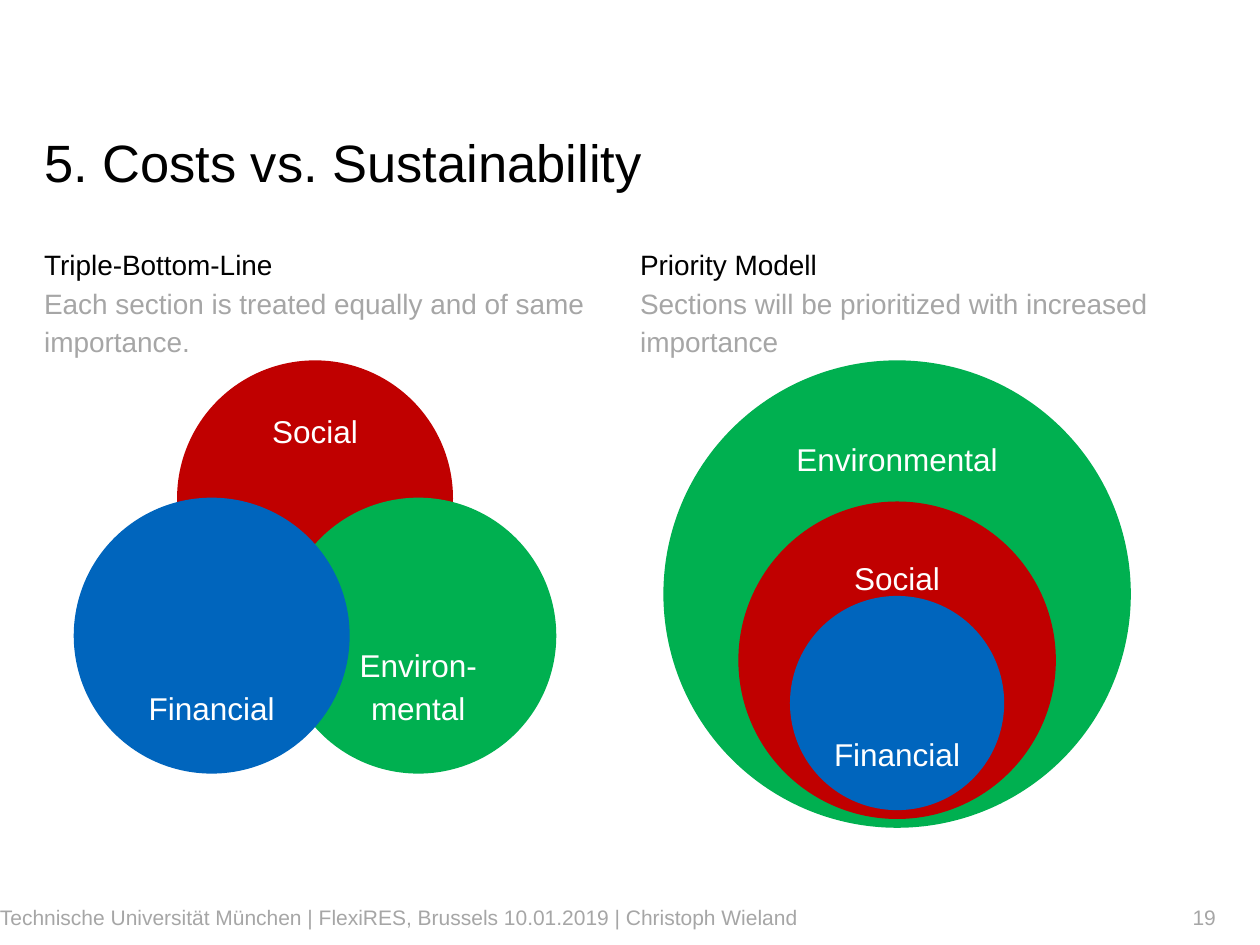
from pptx import Presentation
from pptx.dml.color import RGBColor
from pptx.enum.shapes import MSO_SHAPE as Shape
from pptx.enum.text import MSO_ANCHOR as Anchor, MSO_AUTO_SIZE as AutoSize, PP_ALIGN as Align
from pptx.oxml.ns import qn
from pptx.util import Inches, Pt
from lxml import etree

COLORS = {
    "black": "000000", "grey": "A6A6A6", "white": "FFFFFF",
    "red": "C00000", "green": "00B050", "blue": "0065BD",
}
TITLE = "5. Costs vs. Sustainability"
LINE_SPACING = 1.14

# Left edge, heading, description
COLUMNS = [
    (0.35, "Triple-Bottom-Line", "Each section is treated equally and of same importance."),
    (5.08, "Priority Modell", "Sections will be prioritized with increased importance"),
]
# Left, width, alignment, text
FOOTERS = [
    (0, 7.07, Align.LEFT,
     "Technische Universität München | FlexiRES, Brussels 10.01.2019 | Christoph Wieland"),
    (7.41, 2.24, Align.RIGHT, "19"),
]
# Label, color, horizontal offset from the diagram centre, top, diameter, anchor
TRIPLE_CENTER, TRIPLE_SIZE, TRIPLE_SHIFT = 2.5, 2.19, 0.82
TRIPLE = [
    ("Social", "red", 0, 2.86, TRIPLE_SIZE, Anchor.TOP),
    ("Environ-mental", "green", TRIPLE_SHIFT, 3.95, TRIPLE_SIZE, Anchor.BOTTOM),
    ("Financial", "blue", -TRIPLE_SHIFT, 3.95, TRIPLE_SIZE, Anchor.BOTTOM),
]
PRIORITY_CENTER = 7.12
PRIORITY = [
    ("Environmental", "green", 0, 2.86, 3.71, Anchor.TOP),
    ("Social", "red", 0, 3.98, 2.52, Anchor.TOP),
    ("Financial", "blue", 0, 4.73, 1.7, Anchor.BOTTOM),
]


def place(box, left, top, width, height):
    box.left, box.top = Inches(left), Inches(top)
    box.width, box.height = Inches(width), Inches(height)


def set_frame(frame, anchor, side=0, edge=0):
    values = {
        "word_wrap": True, "vertical_anchor": anchor,
        "margin_left": Inches(side), "margin_right": Inches(side),
        "margin_top": Inches(edge), "margin_bottom": Inches(edge),
    }
    for name, value in values.items():
        setattr(frame, name, value)


def write(para, text, size, color, align=Align.LEFT, spacing=LINE_SPACING):
    values = {"alignment": align, "line_spacing": spacing,
              "space_before": Pt(0), "space_after": Pt(0)}
    for name, value in values.items():
        setattr(para, name, value)
    span = para.add_run()
    span.text = text
    for name, value in {"size": Pt(size), "name": "Arial", "bold": False}.items():
        setattr(span.font, name, value)
    span.font.color.rgb = RGBColor.from_string(COLORS[color])


def remove_bullet(para):
    properties = para._p.get_or_add_pPr()
    properties.set("marL", "0")
    properties.set("indent", "0")
    etree.SubElement(properties, qn("a:buNone"))


def add_circles(page, center, circles):
    for label, color, shift, top, size, anchor in circles:
        left = center + shift - size / 2
        circle = page.shapes.add_shape(
            Shape.OVAL, Inches(left), Inches(top), Inches(size), Inches(size))
        circle.shadow.inherit = False
        circle.fill.solid()
        circle.fill.fore_color.rgb = RGBColor.from_string(COLORS[color])
        circle.line.fill.background()
        set_frame(circle.text_frame, anchor, 0.1, 0.05)
        write(circle.text_frame.paragraphs[0], label, 18, "white", Align.CENTER)


def main():
    deck = Presentation()
    deck.slide_width, deck.slide_height = Inches(10), Inches(7.5)
    page = deck.slides.add_slide(deck.slide_layouts.get_by_name("Two Content"))
    title, *bodies = page.placeholders

    # Title
    place(title, 0.35, 1.09, 9.31, 0.45)
    set_frame(title.text_frame, Anchor.TOP)
    title.text_frame.auto_size = AutoSize.SHAPE_TO_FIT_TEXT
    write(title.text_frame.paragraphs[0], TITLE, 30, "black", spacing=Pt(32))

    # Column texts
    for body, (left, heading, description) in zip(bodies, COLUMNS):
        place(body, left, 1.93, 4.57, 5.13)
        frame = body.text_frame
        set_frame(frame, Anchor.TOP)
        frame.auto_size = AutoSize.NONE
        lines = [(frame.paragraphs[0], heading, "black"),
                 (frame.add_paragraph(), description, "grey")]
        for para, text, color in lines:
            remove_bullet(para)
            write(para, text, 16, color)

    # Diagrams
    add_circles(page, TRIPLE_CENTER, TRIPLE)
    add_circles(page, PRIORITY_CENTER, PRIORITY)

    # Footer and page number
    for left, width, align, text in FOOTERS:
        box = page.shapes.add_textbox(Inches(left), Inches(7.08), Inches(width), Inches(0.4))
        set_frame(box.text_frame, Anchor.MIDDLE, edge=0.05)
        write(box.text_frame.paragraphs[0], text, 12, "grey", align, 1.0)

    deck.save("out.pptx")


if __name__ == "__main__":
    main()
